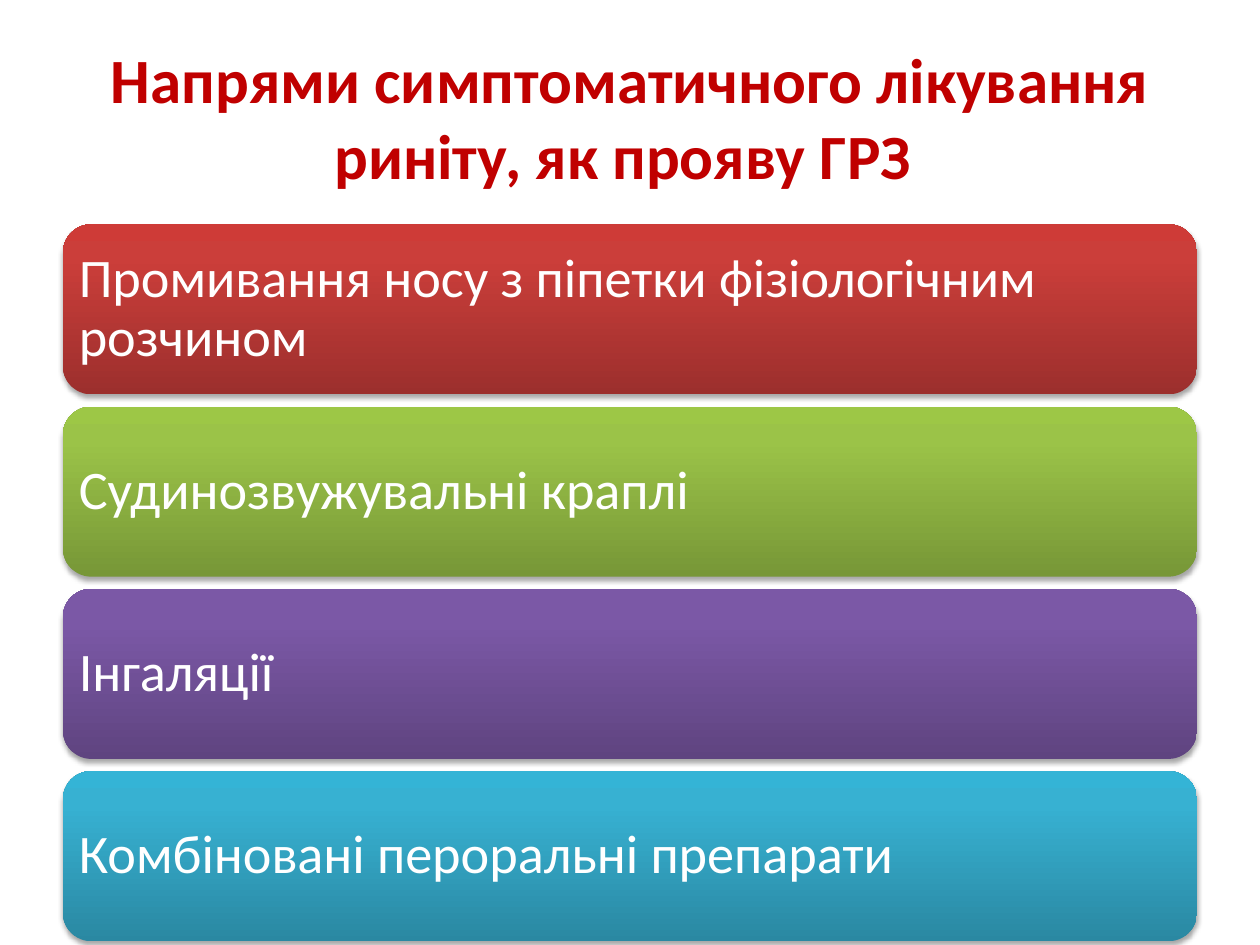
from copy import deepcopy
from dataclasses import dataclass

from pptx import Presentation
from pptx.dml.color import RGBColor as RGB
from pptx.enum.shapes import MSO_SHAPE as SHAPE
from pptx.enum.text import MSO_ANCHOR as ANCHOR, PP_ALIGN as ALIGN
from pptx.oxml import parse_xml
from pptx.oxml.ns import nsdecls, qn
from pptx.util import Inches, Pt


@dataclass(frozen=True)
class Theme:
    font: str = "Calibri"
    title_size: int = 36
    band_size: int = 31
    title_color: str = "C00000"
    band_text: str = "FFFFFF"
    shadow: str = "000000"


THEME = Theme()
TITLE = "Напрями симптоматичного лікування риніту, як прояву ГРЗ "
BANDS = [
    ("Промивання носу з піпетки фізіологічним розчином", ("9C2F2D", "CB3E3A", "CE3B37")),
    ("Судинозвужувальні краплі", ("779737", "9BC348", "9DC746")),
    ("Інгаляції", ("5F4480", "7B58A6", "7C57A8")),
    ("Комбіновані пероральні препарати", ("2A88A2", "37B1D2", "34B4D6")),
]
STOPS = (0, 0.8, 1)
LEFT, WIDTH = 0.5, 9
FIRST_TOP, LAST_TOP, BAND_HEIGHT = 1.78, 6.12, 1.35


def apply(obj, values):
    for name, value in values.items():
        setattr(obj, name, value)


def write(tf, text, size, color, bold, align):
    apply(tf, {"word_wrap": True, "vertical_anchor": ANCHOR.MIDDLE})
    p = tf.paragraphs[0]
    p.alignment = align
    r = p.add_run()
    r.text = text
    apply(r.font, {"name": THEME.font, "size": Pt(size), "bold": bold})
    r.font.color.rgb = RGB.from_string(color)
    return p


def add_title(s):
    sp = s.shapes.title
    apply(sp, {"left": Inches(LEFT), "top": Inches(0.3),
               "width": Inches(WIDTH), "height": Inches(1.25)})
    write(sp.text_frame, TITLE, THEME.title_size, THEME.title_color, True, ALIGN.CENTER)


def fill_gradient(sp, colors):
    sp.fill.gradient()
    sp.fill.gradient_angle = 90
    stops = sp._element.spPr.find(".//" + qn("a:gsLst"))
    stops.append(deepcopy(stops[-1]))
    for stop, position, color in zip(sp.fill.gradient_stops, STOPS, colors):
        stop.position = position
        stop.color.rgb = RGB.from_string(color)


def add_shadow(sp):
    sp.shadow.inherit = False
    sp._element.spPr.find(qn("a:effectLst")).append(parse_xml(
        f'<a:outerShdw {nsdecls("a")} blurRad="{Pt(3.1)}" dist="{Pt(1.8)}" '
        f'dir="5400000" rotWithShape="0"><a:srgbClr val="{THEME.shadow}">'
        '<a:alpha val="35000"/></a:srgbClr></a:outerShdw>'))


def add_band(s, top, text, colors):
    sp = s.shapes.add_shape(SHAPE.ROUNDED_RECTANGLE, Inches(LEFT), Inches(top),
                            Inches(WIDTH), Inches(BAND_HEIGHT))
    fill_gradient(sp, colors)
    sp.line.fill.background()
    add_shadow(sp)
    tf = sp.text_frame
    apply(tf, {f"margin_{side}": Inches(0.06) for side in ("left", "top", "right", "bottom")})
    p = write(tf, text, THEME.band_size, THEME.band_text, False, ALIGN.LEFT)
    p.line_spacing = 0.9


def main():
    prs = Presentation()
    apply(prs, {"slide_width": Inches(10), "slide_height": Inches(7.5)})
    s = prs.slides.add_slide(prs.slide_layouts[5])
    add_title(s)
    pitch = (LAST_TOP - FIRST_TOP) / (len(BANDS) - 1)
    for i, (text, colors) in enumerate(BANDS):
        add_band(s, FIRST_TOP + i * pitch, text, colors)
    prs.save("out.pptx")


if __name__ == "__main__":
    main()
